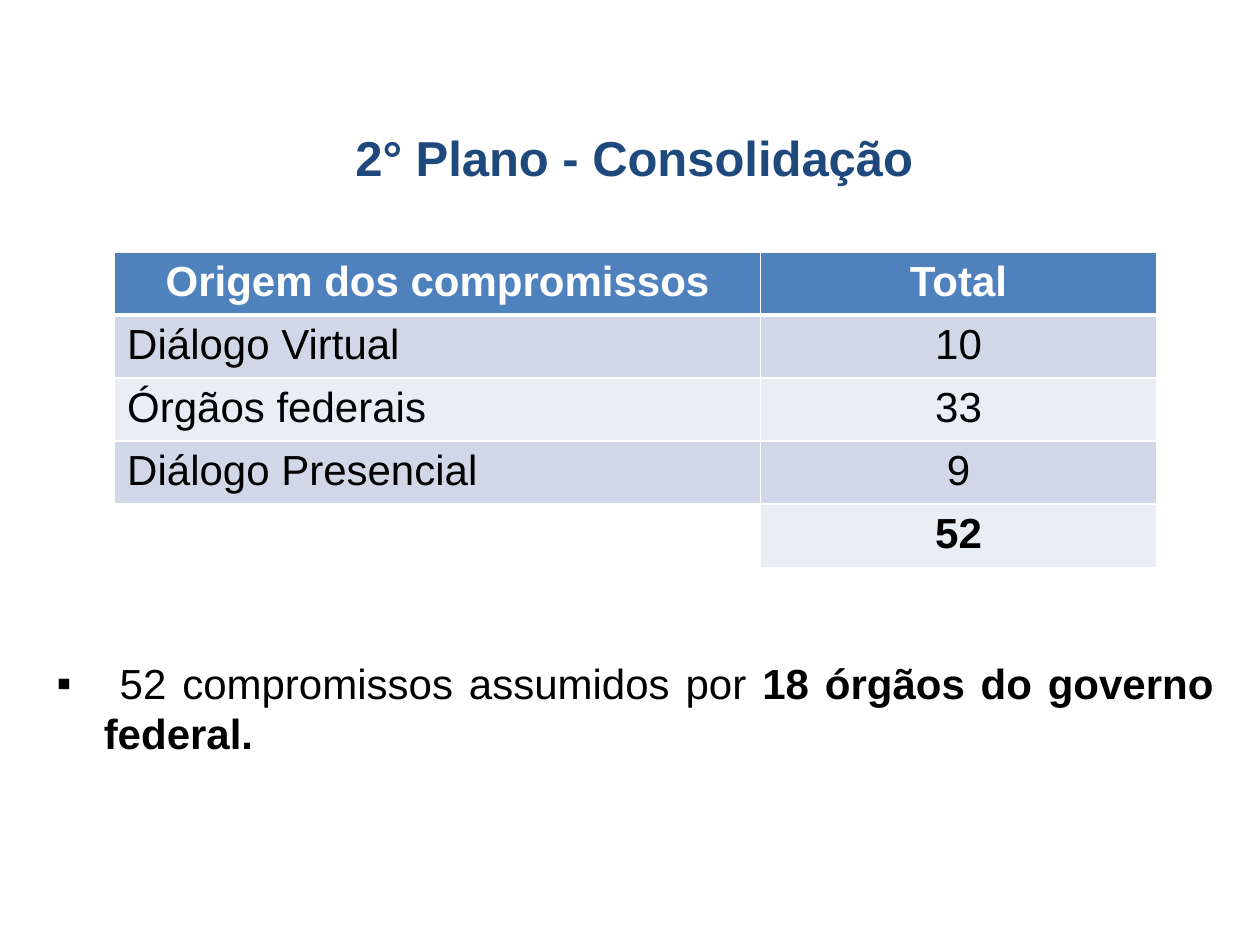
from lxml.etree import SubElement
from pptx import Presentation
from pptx.dml.color import RGBColor
from pptx.enum.text import MSO_ANCHOR, PP_ALIGN
from pptx.oxml.ns import qn
from pptx.util import Pt

FONT = "Arial"
NAVY, BLUE, WHITE, BLACK = "1F497D", "4F81BD", "FFFFFF", "000000"
BANDS = ("D0D8E8", "E9EDF4")
ROWS = [
    ("Origem dos compromissos", "Total"),
    ("Diálogo Virtual", "10"),
    ("Órgãos federais", "33"),
    ("Diálogo Presencial", "9"),
    ("", "52"),
]


def rgb(color):
    return RGBColor.from_string(color)


def set_font(p, size, color, bold=None):
    p.font.name = FONT
    p.font.size = Pt(size)
    p.font.color.rgb = rgb(color)
    p.font.bold = bold


def add_text_box(slide, left, top, width, height):
    box = slide.shapes.add_textbox(Pt(left), Pt(top), Pt(width), Pt(height))
    box.text_frame.word_wrap = True
    return box.text_frame.paragraphs[0]


def add_title(slide, left, top, width, height):
    p = add_text_box(slide, left, top, width, height)
    p.text = "2° Plano - Consolidação"
    p.alignment = PP_ALIGN.CENTER
    set_font(p, 28, NAVY, True)


def set_borders(cell, bottom):
    tc_pr = cell._tc.get_or_add_tcPr()
    for side, width in (("L", 1), ("R", 1), ("T", 1), ("B", bottom)):
        ln = SubElement(tc_pr, qn(f"a:ln{side}"), w=str(Pt(width)))
        fill = SubElement(ln, qn("a:solidFill"))
        SubElement(fill, qn("a:srgbClr"), val=WHITE)


def add_totals_table(slide, left, top, width, height):
    frame = slide.shapes.add_table(len(ROWS), 2, Pt(left), Pt(top), Pt(width), Pt(height))
    table = frame.table
    name_width = 0.62 * width
    table.columns[0].width = Pt(name_width)
    table.columns[1].width = Pt(width - name_width)
    for i, row in enumerate(ROWS):
        header, last = i == 0, i == len(ROWS) - 1
        for j, text in enumerate(row):
            cell = table.cell(i, j)
            set_borders(cell, 3 if header else 1)
            cell.fill.solid()
            band = BLUE if header else BANDS[(i - 1) % 2]
            cell.fill.fore_color.rgb = rgb(band if text else WHITE)
            cell.vertical_anchor = MSO_ANCHOR.TOP
            p = cell.text_frame.paragraphs[0]
            if text:
                p.text = text
            p.alignment = PP_ALIGN.CENTER if header or j else PP_ALIGN.LEFT
            set_font(p, 24, WHITE if header else BLACK, header or last)


def add_summary(slide, left, top, width, height):
    p = add_text_box(slide, left, top, width, height)
    p.alignment = PP_ALIGN.JUSTIFY
    p_pr = p._p.get_or_add_pPr()
    p_pr.set("marL", str(Pt(27)))
    p_pr.set("indent", str(Pt(-27)))
    SubElement(p_pr, qn("a:buFont"), typeface=FONT)
    SubElement(p_pr, qn("a:buChar"), char="▪")
    set_font(p, 24, BLACK)
    p.add_run().text = " 52 compromissos assumidos por "
    r = p.add_run()
    r.text = "18 órgãos do governo federal."
    r.font.bold = True


def main():
    prs = Presentation()
    prs.slide_width, prs.slide_height = Pt(720), Pt(540)
    slide = prs.slides.add_slide(prs.slide_layouts[6])
    add_title(slide, 25.2, 69.1, 674.6, 41)
    add_totals_table(slide, 65.5, 144, 595.4, 180)
    add_summary(slide, 25.2, 372.2, 675.4, 87.1)
    prs.save("out.pptx")


if __name__ == "__main__":
    main()
